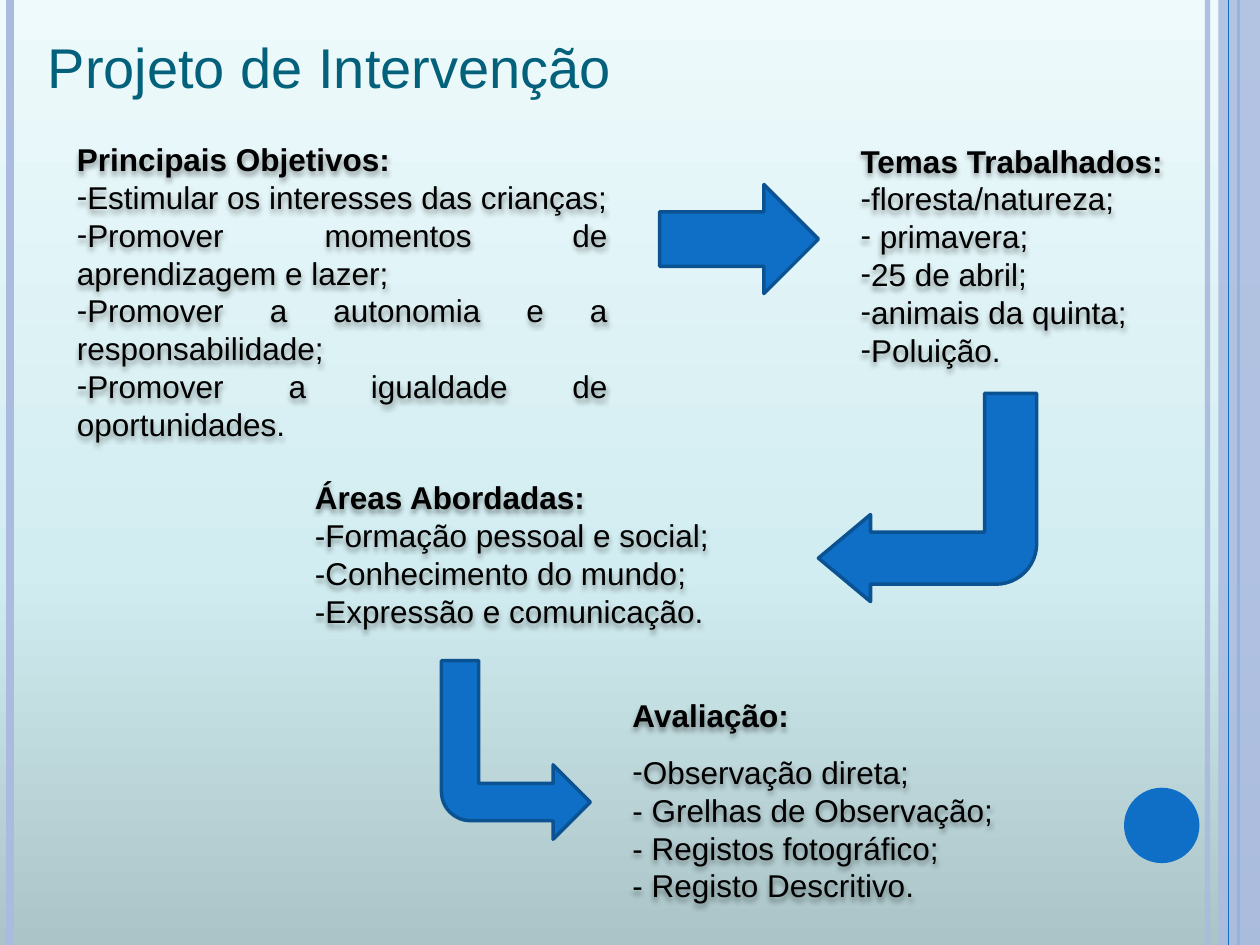
from copy import deepcopy

from lxml.etree import SubElement
from pptx import Presentation
from pptx.dml.color import RGBColor
from pptx.enum.shapes import MSO_CONNECTOR, MSO_SHAPE
from pptx.enum.text import MSO_ANCHOR, MSO_AUTO_SIZE, PP_ALIGN
from pptx.oxml.ns import qn
from pptx.util import Cm, Pt

BLUE = RGBColor(0x0F, 0x6F, 0xC6)
DARK_BLUE = RGBColor(0x0B, 0x52, 0x92)
LAVENDER = RGBColor(0xAB, 0xBB, 0xDF)
TEAL = RGBColor(0x04, 0x61, 0x7B)
BLACK = RGBColor(0, 0, 0)
BACKGROUND = [(0, RGBColor(0xAA, 0xC4, 0xC7)), (0.4, RGBColor(0xD2, 0xED, 0xF1)),
              (1, RGBColor(0xEE, 0xFA, 0xFC))]
FONT = "Arial"
WIDTH, HEIGHT = 25.4, 19.05

# Content: all positions in centimetres
TITLE = "Projeto de Intervenção"
BULLET = {"bullet": "-", "align": PP_ALIGN.JUSTIFY}
HEADING = {"bold": True, "align": PP_ALIGN.JUSTIFY}
PLAIN = {}
HANGING = {"hanging": 0.79}
BLOCKS = [
    ((1.3, 2.32, 11.2, 6.81), [
        ("Principais Objetivos:", {**HEADING, "spacing": 1.5}),
        ("Estimular os interesses das crianças;", BULLET),
        ("Promover momentos de aprendizagem e lazer;", BULLET),
        ("Promover a autonomia e a responsabilidade;", BULLET),
        ("Promover a igualdade de oportunidades.", BULLET)]),
    ((17.1, 2.73, 6.81, 4.88), [
        ("Temas Trabalhados:", HEADING),
        ("floresta/natureza;", BULLET),
        (" primavera;", BULLET),
        ("25 de abril;", BULLET),
        ("animais da quinta;", BULLET),
        ("Poluição.", BULLET)]),
    ((6.1, 9.52, 9.19, 3.33), [
        ("Áreas Abordadas:", {"bold": True}),
        ("-Formação pessoal e social;", PLAIN),
        ("-Conhecimento do mundo;", PLAIN),
        ("-Expressão e comunicação.", PLAIN)]),
    ((12.5, 13.53, 8.2, 4.88), [
        ("Avaliação:", {**HEADING, "spacing": 1.5}),
        ("Observação direta;", {**BULLET, "spacing": 1.5}),
        ("- Grelhas de Observação;", HANGING),
        ("- Registos fotográfico;", HANGING),
        ("- Registo Descritivo.", HANGING)]),
]
# Arrow: preset, box, adjustments, flips
ARROWS = [
    (MSO_SHAPE.BENT_ARROW, (16.5, 7.93, 4.4, 4.2), (0.25, 0.209, 0.25, 0.195), ("flipH", "flipV")),
    (MSO_SHAPE.RIGHT_ARROW, (13.3, 3.72, 3.2, 2.2), (), ()),
    (MSO_SHAPE.BENT_ARROW, (8.9, 13.32, 3, 3.6), (0.25, 0.25, 0.25, 0.195), ("flipV",)),
]
# Vertical rule: x, colour, points, opacity in percent
RULES_BEHIND = [(24.34, LAVENDER, 3, 93), (0.21, LAVENDER, 4.5, 100), (24.97, BLUE, 1.5, 100)]
RULES_FRONT = [(24.77, BLUE, 0.75, 100)]


def box(values):
    return [Cm(value) for value in values]


def set_opacity(shape_properties, percent):
    color = shape_properties.find(".//" + qn("a:srgbClr"))
    SubElement(color, qn("a:alpha"), val=str(percent * 1000))


def write(paragraph, text, size=18, color=BLACK, bold=False, align=PP_ALIGN.LEFT,
          spacing=None, bullet=None, hanging=0):
    paragraph.alignment = align
    if spacing:
        paragraph.line_spacing = spacing
    properties = paragraph._p.get_or_add_pPr()
    properties.set("marL", str(Cm(hanging)))
    properties.set("indent", str(-Cm(hanging)))
    if bullet:
        SubElement(properties, qn("a:buFont"), typeface=FONT)
        SubElement(properties, qn("a:buChar"), char=bullet)
    run = paragraph.add_run()
    run.text = text
    run.font.name, run.font.size, run.font.bold = FONT, Pt(size), bold
    run.font.color.rgb = color


def add_text_shadow(shape):
    effects = SubElement(shape._element.spPr, qn("a:effectLst"))
    shadow = SubElement(effects, qn("a:outerShdw"), blurRad="38100", dist="25400",
                        dir="5400000", algn="t", rotWithShape="0")
    color = SubElement(shadow, qn("a:srgbClr"), val="000000")
    SubElement(color, qn("a:alpha"), val="40000")


def add_shape(slide, preset, position, fill, line=None):
    shape = slide.shapes.add_shape(preset, *box(position))
    shape.shadow.inherit = False
    shape.fill.solid()
    shape.fill.fore_color.rgb = fill
    if line:
        shape.line.color.rgb = line
        shape.line.width = Pt(2)
    else:
        shape.line.fill.background()
    return shape


def add_rules(slide, rules):
    for x, color, points, opacity in rules:
        rule = slide.shapes.add_connector(MSO_CONNECTOR.STRAIGHT, Cm(x), 0, Cm(x), Cm(HEIGHT))
        rule.line.color.rgb = color
        rule.line.width = Pt(points)
        SubElement(rule._element.spPr, qn("a:effectLst"))
        if opacity < 100:
            set_opacity(rule._element.spPr, opacity)


def main():
    presentation = Presentation()
    presentation.slide_width, presentation.slide_height = Cm(WIDTH), Cm(HEIGHT)
    slide = presentation.slides.add_slide(presentation.slide_layouts[5])

    # Background gradient, from bottom to top
    fill = slide.background.fill
    fill.gradient()
    fill.gradient_angle = 90
    stop_list = slide._element.find(".//" + qn("a:gsLst"))
    stop_list.append(deepcopy(stop_list[0]))
    for stop, (position, color) in zip(fill.gradient_stops, BACKGROUND):
        stop.position = position
        stop.color.rgb = color

    # Side rules, band and circle
    add_rules(slide, RULES_BEHIND)
    band = add_shape(slide, MSO_SHAPE.RECTANGLE, (24.56, 0, 0.84, HEIGHT), LAVENDER)
    set_opacity(band._element.spPr, 87)
    add_rules(slide, RULES_FRONT)
    add_shape(slide, MSO_SHAPE.OVAL, (22.66, 15.88, 1.52, 1.52), BLUE)

    # Title
    title = slide.shapes.title
    title.left, title.top, title.width, title.height = box((0.71, 0.53, 11.96, 1.63))
    title.text_frame.word_wrap = False
    title.text_frame.auto_size = MSO_AUTO_SIZE.SHAPE_TO_FIT_TEXT
    title.text_frame.vertical_anchor = MSO_ANCHOR.TOP
    write(title.text_frame.paragraphs[0], TITLE, size=32, color=TEAL)

    # Text blocks
    for position, lines in BLOCKS:
        block = slide.shapes.add_textbox(*box(position))
        add_text_shadow(block)
        frame = block.text_frame
        frame.word_wrap = True
        frame.auto_size = MSO_AUTO_SIZE.SHAPE_TO_FIT_TEXT
        for index, (text, style) in enumerate(lines):
            paragraph = frame.add_paragraph() if index else frame.paragraphs[0]
            write(paragraph, text, **style)

    # Arrows between the blocks
    for preset, position, adjustments, flips in ARROWS:
        arrow = add_shape(slide, preset, position, BLUE, DARK_BLUE)
        for index, value in enumerate(adjustments):
            arrow.adjustments[index] = value
        for flip in flips:
            arrow._element.spPr.xfrm.set(flip, "1")

    presentation.save("out.pptx")


if __name__ == "__main__":
    main()
